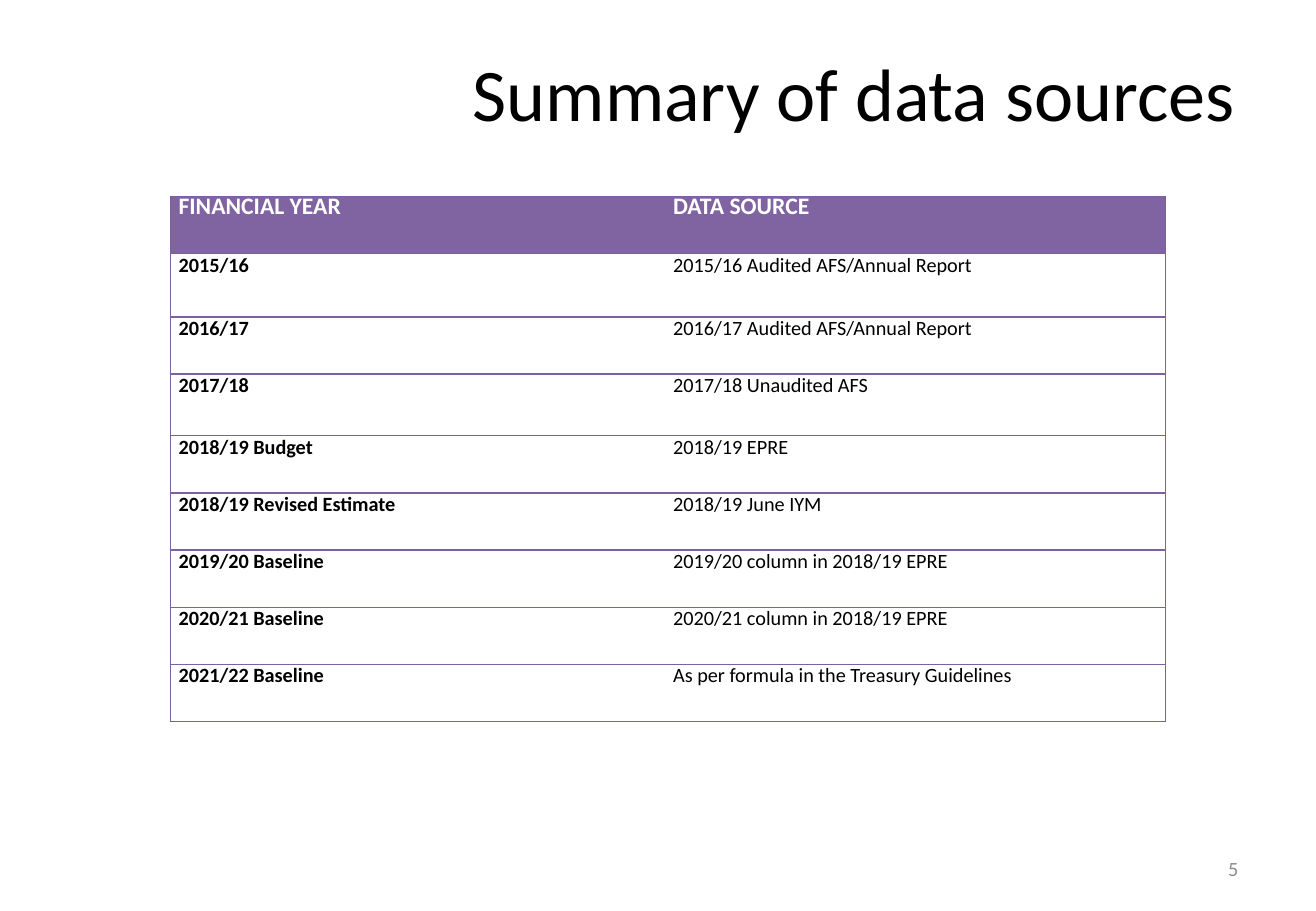
import pptx
import pptx.util
import pptx.dml.color
import pptx.enum.text
import pptx.oxml
import pptx.oxml.ns

Inches, Pt = pptx.util.Inches, pptx.util.Pt
RGBColor = pptx.dml.color.RGBColor
ALIGN = pptx.enum.text.PP_ALIGN
MIDDLE = pptx.enum.text.MSO_ANCHOR.MIDDLE

FONT = "Calibri"
BLACK = RGBColor(0x00, 0x00, 0x00)
WHITE = RGBColor(0xFF, 0xFF, 0xFF)
GREY = RGBColor(0x8C, 0x8C, 0x8C)
PURPLE = RGBColor(0x80, 0x64, 0xA2)
BORDER = RGBColor(0x7D, 0x60, 0xA0)

SOURCES = [
    ("FINANCIAL YEAR", "DATA SOURCE"),
    ("2015/16", "2015/16 Audited AFS/Annual Report"),
    ("2016/17", "2016/17 Audited AFS/Annual Report"),
    ("2017/18", "2017/18 Unaudited AFS"),
    ("2018/19 Budget", "2018/19 EPRE"),
    ("2018/19 Revised Estimate", "2018/19 June IYM"),
    ("2019/20 Baseline", "2019/20 column in 2018/19 EPRE"),
    ("2020/21 Baseline", "2020/21 column in 2018/19 EPRE"),
    ("2021/22 Baseline", "As per formula in the Treasury Guidelines"),
]
COLUMN_WIDTHS = [4.07, 4.12]
ROW_HEIGHT = 0.47
TALL_ROWS = {1: 0.52, 3: 0.51}


def write(paragraph, text, size, color, align, bold=False):
    paragraph.text = text
    paragraph.alignment = align
    font = paragraph.runs[0].font
    font.name, font.size, font.bold = FONT, Pt(size), bold
    font.color.rgb = color


def set_borders(cell, visible_sides):
    """Draw the named sides (L, R, T, B) and blank the others."""
    for side in "LRTB":
        fill = "<a:noFill/>"
        if side in visible_sides:
            fill = f'<a:solidFill><a:srgbClr val="{BORDER}"/></a:solidFill>'
        cell._tc.get_or_add_tcPr().append(pptx.oxml.parse_xml(
            f'<a:ln{side} {pptx.oxml.ns.nsdecls("a")} w="{Pt(0.75)}">{fill}</a:ln{side}>'))


deck = pptx.Presentation()
deck.slide_width, deck.slide_height = Inches(10.83), Inches(7.5)
page = deck.slides.add_slide(deck.slide_layouts[5])

title = page.shapes.title
title.left, title.top = Inches(3.29), Inches(0.13)
title.width, title.height = Inches(7.48), Inches(1.25)
title.text_frame.vertical_anchor = MIDDLE
write(title.text_frame.paragraphs[0], "Summary of data sources", 44, BLACK, ALIGN.CENTER)

row_heights = [TALL_ROWS.get(row, ROW_HEIGHT) for row in range(len(SOURCES))]
table = page.shapes.add_table(
    len(SOURCES), len(COLUMN_WIDTHS), Inches(1.4), Inches(1.62),
    Inches(sum(COLUMN_WIDTHS)), Inches(sum(row_heights))).table
table.horz_banding = False
for column, width in zip(table.columns, COLUMN_WIDTHS):
    column.width = Inches(width)

for row, (texts, height) in enumerate(zip(SOURCES, row_heights)):
    table.rows[row].height = Inches(height)
    header = row == 0
    for column, text in enumerate(texts):
        cell = table.cell(row, column)
        set_borders(cell, "TB" + "LR"[column])
        cell.fill.solid()
        cell.fill.fore_color.rgb = PURPLE if header else WHITE
        cell.margin_left = cell.margin_right = Inches(0.07)
        cell.margin_top = cell.margin_bottom = 0
        para = cell.text_frame.paragraphs[0]
        write(para, text, 14 if header else 12, WHITE if header else BLACK,
              ALIGN.JUSTIFY, bold=header or column == 0)
        para.line_spacing = Pt(14)
        para.space_after = Pt(6 if header else 2)

number_box = page.shapes.add_textbox(Inches(7.76), Inches(6.95), Inches(2.53), Inches(0.4))
number_box.text_frame.word_wrap = True
number_box.text_frame.vertical_anchor = MIDDLE
write(number_box.text_frame.paragraphs[0], "5", 12, GREY, ALIGN.RIGHT)

deck.save("out.pptx")
